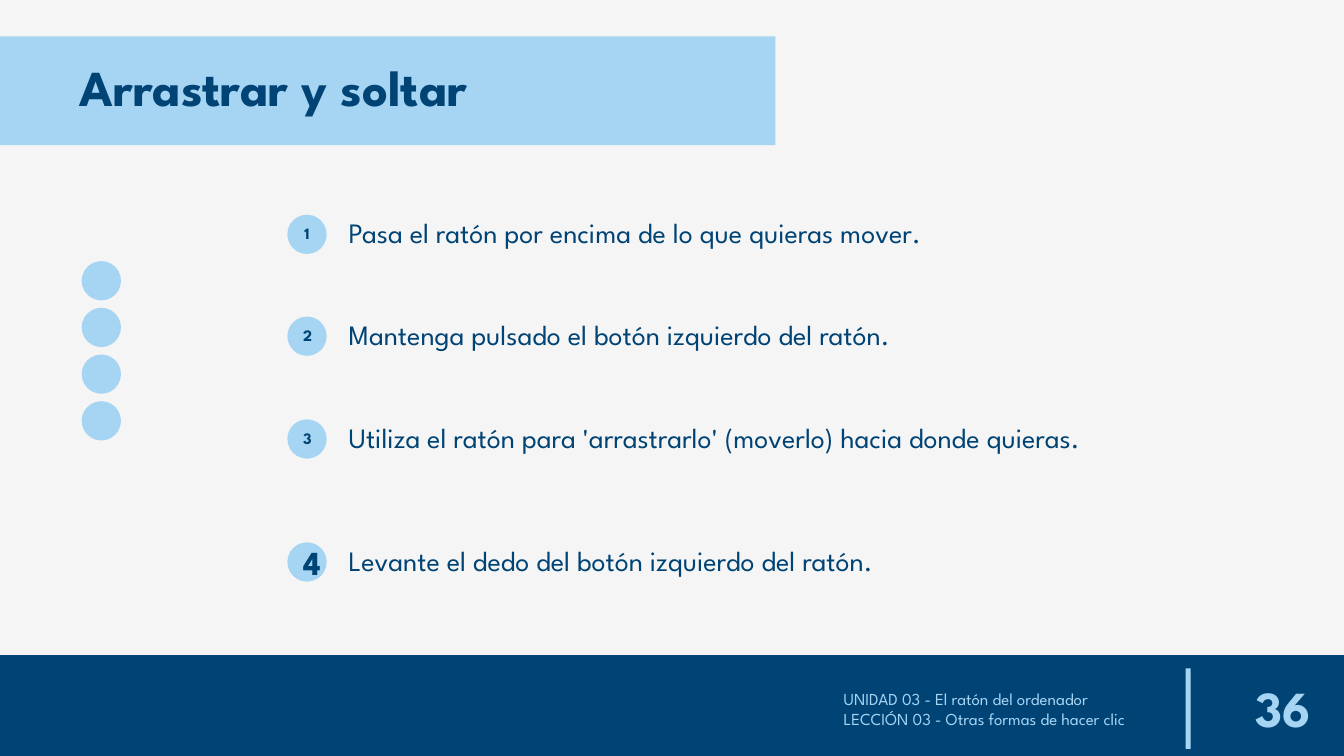
from dataclasses import dataclass

from pptx import Presentation
from pptx.dml.color import RGBColor
from pptx.enum.shapes import MSO_SHAPE
from pptx.enum.text import MSO_ANCHOR, MSO_AUTO_SIZE, PP_ALIGN
from pptx.util import Inches, Pt

RECT, OVAL, ROUND = MSO_SHAPE.RECTANGLE, MSO_SHAPE.OVAL, MSO_SHAPE.ROUNDED_RECTANGLE
TOP, MIDDLE = MSO_ANCHOR.TOP, MSO_ANCHOR.MIDDLE
LEFT, CENTER, RIGHT = PP_ALIGN.LEFT, PP_ALIGN.CENTER, PP_ALIGN.RIGHT
FIXED = MSO_AUTO_SIZE.NONE


@dataclass(frozen=True)
class Theme:
    navy: str = "004375"
    sky: str = "A6D5F4"
    paper: str = "F5F5F5"
    font: str = "League Spartan"
    head: float = 36
    body: float = 20
    mark: float = 11.4
    last: float = 24
    foot: float = 12


THEME = Theme()
WIDE, HIGH = 13.33, 7.5
DOT = 0.39

# Top of each step, its wording and the size of its number
STEPS = [
    (2.13, "Pasa el ratón por encima de lo que quieras mover.", THEME.mark),
    (3.14, "Mantenga pulsado el botón izquierdo del ratón.", THEME.mark),
    (4.16, "Utiliza el ratón para 'arrastrarlo' (moverlo) hacia donde quieras.", THEME.mark),
    (5.38, "Levante el dedo del botón izquierdo del ratón.", THEME.last),
]
UNIT = ["UNIDAD 03 - El ratón del ordenador", "LECCIÓN 03 - Otras formas de hacer clic"]


def place(box):
    return [Inches(n) for n in box]


def block(slide, kind, box, color):
    """Add a plain filled shape."""
    shape = slide.shapes.add_shape(kind, *place(box))
    shape.shadow.inherit = False
    shape.fill.solid()
    shape.fill.fore_color.rgb = RGBColor.from_string(color)
    shape.line.fill.background()
    return shape


def write(shape, lines, size, color, bold=False, align=LEFT, anchor=TOP, gap=0.9):
    """Fill a shape with one run per line."""
    frame = shape.text_frame
    frame.word_wrap = True
    frame.auto_size = FIXED
    frame.vertical_anchor = anchor
    for i, line in enumerate(lines):
        para = frame.add_paragraph() if i else frame.paragraphs[0]
        para.alignment = align
        para.line_spacing = gap
        para.space_before = Pt(0)
        run = para.add_run()
        run.text = line
        font = run.font
        font.name, font.size, font.bold = THEME.font, Pt(size), bold
        font.color.rgb = RGBColor.from_string(color)


def header(slide, box, text):
    """Band with the title placeholder in front of it."""
    x, y, w, h = box
    block(slide, RECT, box, THEME.sky)
    title = slide.shapes.title
    title.left, title.top, title.width, title.height = place((x + 0.69, y + 0.21, 9.56, 0.55))
    write(title, [text], THEME.head, THEME.navy, bold=True)
    slide.shapes._spTree.append(title._element)


def dots(slide, box, count):
    """Column of equal dots filling the box."""
    x, y, w, h = box
    step = (h - w) / (count - 1)
    for i in range(count):
        block(slide, OVAL, (x, y + i * step, w, w), THEME.sky)


def steps(slide, box, items):
    """Numbered badges with their sentences."""
    x, y, w, h = box
    for num, (top, text, size) in enumerate(items, 1):
        badge = block(slide, ROUND, (x, top, DOT, DOT), THEME.sky)
        badge.adjustments[0] = 0.5
        write(badge, [str(num)], size, THEME.navy, True, CENTER, MIDDLE,
              1.0 if size == THEME.last else 0.9)
        label = slide.shapes.add_textbox(*place((x + 0.51, top, w - 0.51, 0.66)))
        write(label, [text], THEME.body, THEME.navy)


def footer(slide, box, lines, page):
    """Bottom bar with unit, divider and page number."""
    x, y, w, h = box
    block(slide, RECT, box, THEME.navy)
    block(slide, RECT, (x + 11.76, y + 0.13, 0.05, 0.8), THEME.sky)
    unit = slide.shapes.add_textbox(*place((x + 8.27, y + 0.2, 3.37, 0.66)))
    write(unit, lines, THEME.foot, THEME.sky, anchor=MIDDLE, gap=1.0)
    number = slide.shapes.add_textbox(*place((x + 11.91, y + 0.19, 1.19, 0.66)))
    write(number, [page], THEME.head, THEME.sky, True, RIGHT, MIDDLE, 1.0)


def main():
    deck = Presentation()
    deck.slide_width, deck.slide_height = Inches(WIDE), Inches(HIGH)
    slide = deck.slides.add_slide(deck.slide_layouts[5])
    fill = slide.background.fill
    fill.solid()
    fill.fore_color.rgb = RGBColor.from_string(THEME.paper)

    footer(slide, (0, HIGH - 1, WIDE, 1), UNIT, "36")
    header(slide, (0, 0.36, 7.69, 1.08), "Arrastrar y soltar")
    dots(slide, (0.81, 2.59, DOT, 1.78), 4)
    steps(slide, (2.85, 2.13, 8.61, 3.91), STEPS)
    deck.save("out.pptx")


if __name__ == "__main__":
    main()
